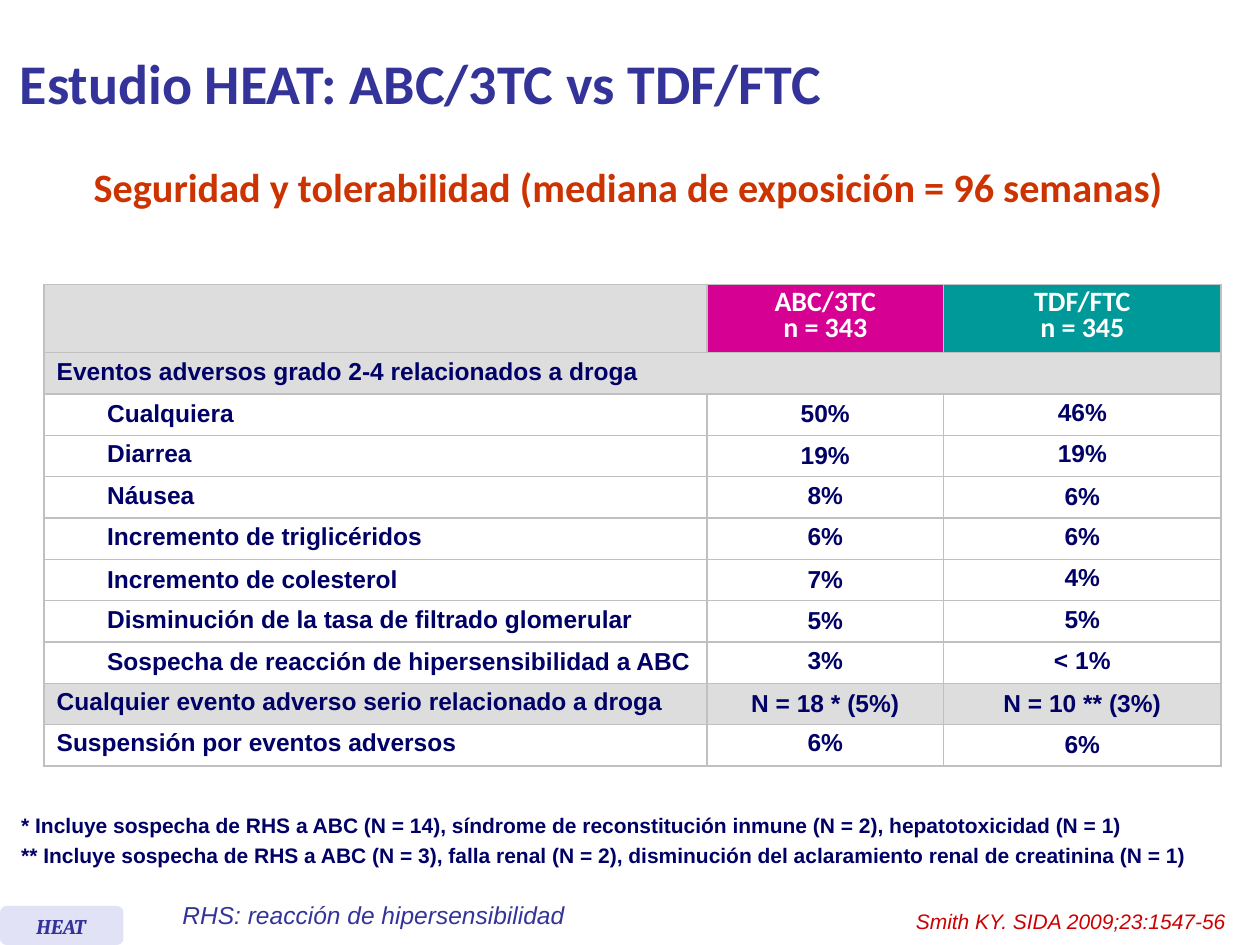
from pptx import Presentation
from pptx.dml.color import RGBColor
from pptx.enum.shapes import MSO_SHAPE
from pptx.enum.text import MSO_ANCHOR, PP_ALIGN
from pptx.oxml import parse_xml
from pptx.oxml.ns import nsdecls
from pptx.util import Inches, Pt

COLORS = {
    "indigo": "333399", "rust": "CC3300", "navy": "000066", "red": "CC0000",
    "white": "FFFFFF", "gray": "DDDDDD", "border": "C0C0C0",
    "magenta": "D60093", "teal": "009999", "lavender": "E2E2F6",
}

# Content
TITLE = "Estudio HEAT: ABC/3TC vs TDF/FTC"
SUBTITLE = "Seguridad y tolerabilidad (mediana de exposición = 96 semanas)"
HEADER = ["", "ABC/3TC\nn = 343", "TDF/FTC\nn = 345"]
HEADER_FILLS = ["gray", "magenta", "teal"]
# Row kind, then the three cells
ROWS = [
    ("section", "Eventos adversos grado 2-4 relacionados a droga", "", ""),
    ("item", "Cualquiera", "50%", "46%"),
    ("item", "Diarrea", "19%", "19%"),
    ("item", "Náusea", "8%", "6%"),
    ("item", "Incremento de triglicéridos", "6%", "6%"),
    ("item", "Incremento de colesterol", "7%", "4%"),
    ("item", "Disminución de la tasa de filtrado glomerular", "5%", "5%"),
    ("item", "Sospecha de reacción de hipersensibilidad a ABC", "3%", "< 1%"),
    ("section", "Cualquier evento adverso serio relacionado a droga",
     "N = 18 * (5%)", "N = 10 ** (3%)"),
    ("total", "Suspensión por eventos adversos", "6%", "6%"),
]
# Cells (row, column) with the wider line spacing
LOOSE = {(2, 0), (2, 1), (3, 1), (4, 2), (6, 0), (6, 1), (7, 1), (8, 0),
         (9, 1), (9, 2), (10, 2)}
FOOTNOTES = [
    "* Incluye sospecha de RHS a ABC (N = 14), síndrome de reconstitución "
    "inmune (N = 2), hepatotoxicidad (N = 1)",
    "** Incluye sospecha de RHS a ABC (N = 3), falla renal (N = 2), "
    "disminución del aclaramiento renal de creatinina (N = 1)",
]
COL_WIDTHS = [5.26, 1.88, 2.2]
HEADER_HEIGHT, TABLE_HEIGHT = 0.54, 3.82


def rgb(name):
    return RGBColor.from_string(COLORS[name])


def write(p, text, size, font, color, bold=False, italic=False,
          align=PP_ALIGN.LEFT, spacing=None):
    p.text = text
    p.alignment = align
    p.line_spacing = spacing
    f = p.font
    f.size, f.name, f.bold, f.italic = Pt(size), font, bold, italic
    f.color.rgb = rgb(color)


def add_text(s, box, lines, *style, wrap=True, anchor=MSO_ANCHOR.TOP, **options):
    tf = s.shapes.add_textbox(*map(Inches, box)).text_frame
    tf.word_wrap = wrap
    tf.vertical_anchor = anchor
    for i, line in enumerate(lines):
        p = tf.add_paragraph() if i else tf.paragraphs[0]
        write(p, line, *style, **options)


def add_borders(cell):
    tcPr = cell._tc.get_or_add_tcPr()
    for i, side in enumerate(("lnL", "lnR", "lnT", "lnB")):
        tcPr.insert(i, parse_xml(
            f'<a:{side} {nsdecls("a")} w="12700"><a:solidFill>'
            f'<a:srgbClr val="{COLORS["border"]}"/></a:solidFill></a:{side}>'))


def fill_cell(cell, color):
    cell.fill.solid()
    cell.fill.fore_color.rgb = rgb(color)
    cell.vertical_anchor = MSO_ANCHOR.MIDDLE
    add_borders(cell)


def add_events_table(s):
    table = s.shapes.add_table(
        len(ROWS) + 1, len(COL_WIDTHS), Inches(0.35), Inches(2.26),
        Inches(sum(COL_WIDTHS)), Inches(TABLE_HEIGHT)).table
    table.first_row = table.horz_banding = False
    for col, width in zip(table.columns, COL_WIDTHS):
        col.width = Inches(width)
    for row in table.rows:
        row.height = Inches((TABLE_HEIGHT - HEADER_HEIGHT) / len(ROWS))
    table.rows[0].height = Inches(HEADER_HEIGHT)

    for c, (text, color) in enumerate(zip(HEADER, HEADER_FILLS)):
        cell = table.cell(0, c)
        fill_cell(cell, color)
        write(cell.text_frame.paragraphs[0], text, 16, "Calibri", "white",
              bold=True, align=PP_ALIGN.CENTER, spacing=Pt(15.2))

    for r, (kind, *texts) in enumerate(ROWS, 1):
        for c, text in enumerate(texts):
            cell = table.cell(r, c)
            fill_cell(cell, "gray" if kind == "section" else "white")
            p = cell.text_frame.paragraphs[0]
            if kind == "item" and c == 0:
                p._p.get_or_add_pPr().set("marL", str(Inches(0.4)))
            write(p, text, 14, "Arial", "navy", bold=True,
                  align=PP_ALIGN.CENTER if c else PP_ALIGN.LEFT,
                  spacing=Pt(15.2 if (r, c) in LOOSE else 13.6))
    table.cell(1, 0).merge(table.cell(1, 2))


prs = Presentation()
prs.slide_width, prs.slide_height = Inches(10), Inches(7.5)
s = prs.slides.add_slide(prs.slide_layouts[6])

# Headings
add_text(s, (0.06, 0.05, 8.96, 1.21), [TITLE], 32, "Calibri", "indigo",
         bold=True, anchor=MSO_ANCHOR.MIDDLE)
add_text(s, (0.06, 1.24, 9.87, 0.71), [SUBTITLE], 23, "Calibri", "rust",
         bold=True, align=PP_ALIGN.CENTER)

# Footnotes and table
add_text(s, (0.07, 6.36, 9.88, 0.58), FOOTNOTES, 12, "Arial", "navy",
         bold=True, spacing=1.2)
add_events_table(s)

# Study tag
tag = s.shapes.add_shape(MSO_SHAPE.ROUNDED_RECTANGLE, Inches(0), Inches(7.19),
                         Inches(0.98), Inches(0.31))
tag.shadow.inherit = False
tag.fill.solid()
tag.fill.fore_color.rgb = rgb("lavender")
tag.line.fill.background()
add_text(s, (0.19, 7.2, 0.61, 0.3), ["HEAT"], 12, "Cambria", "indigo",
         bold=True, italic=True, wrap=False)

# Citation and abbreviation
add_text(s, (7.17, 7.16, 2.68, 0.3), ["Smith KY. SIDA 2009;23:1547-56"], 12,
         "Arial", "red", italic=True, wrap=False)
add_text(s, (1.35, 7.09, 3.44, 0.33), ["RHS: reacción de hipersensibilidad"],
         14, "Arial", "indigo", italic=True)

prs.save("out.pptx")
